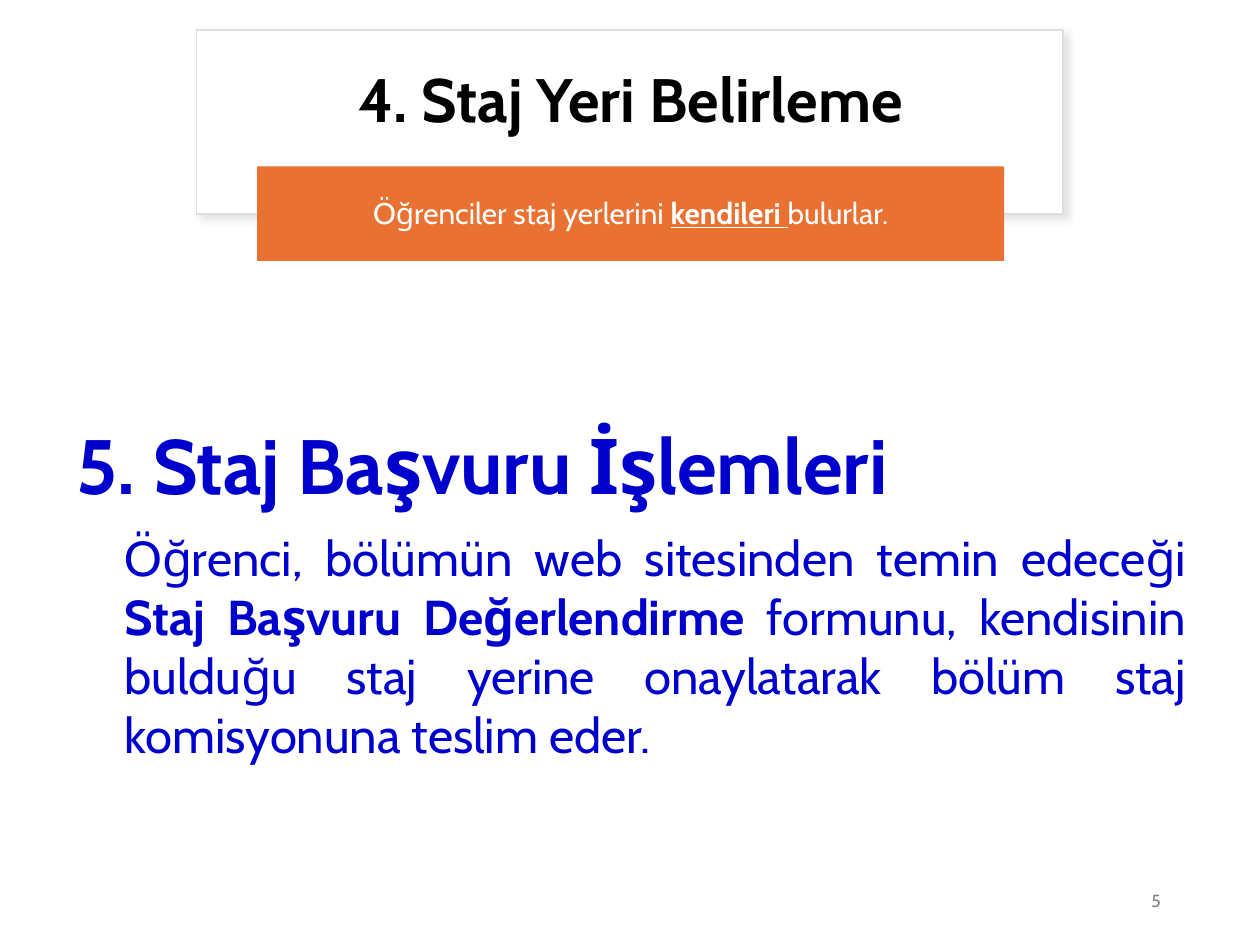
from dataclasses import dataclass

from lxml import etree
from pptx import Presentation
from pptx.dml.color import RGBColor
from pptx.enum.shapes import MSO_SHAPE
from pptx.enum.text import MSO_ANCHOR, PP_ALIGN
from pptx.oxml.ns import qn
from pptx.shapes.autoshape import Shape
from pptx.slide import Slide
from pptx.util import Inches, Pt

RECT, ROUND = MSO_SHAPE.RECTANGLE, MSO_SHAPE.ROUNDED_RECTANGLE
TOP, MID = MSO_ANCHOR.TOP, MSO_ANCHOR.MIDDLE
LEFT, RIGHT = PP_ALIGN.LEFT, PP_ALIGN.RIGHT
CENTER, FULL = PP_ALIGN.CENTER, PP_ALIGN.JUSTIFY

WHITE = RGBColor(255, 255, 255)
BLACK = RGBColor(0, 0, 0)
BLUE = RGBColor(0, 0, 204)
ORANGE = RGBColor(233, 113, 50)
GREY = RGBColor(128, 128, 128)
EDGE = RGBColor(222, 222, 222)
SHADE = RGBColor(197, 197, 197)

FONT = "Cabin"
WIDE, HIGH = Inches(10), Inches(7.5)
COLS, ROWS = 100, 75


@dataclass
class Box:
    col: float
    row: float
    cols: float
    rows: float

    def place(self) -> tuple[int, int, int, int]:
        return (
            round(self.col * WIDE / COLS),
            round(self.row * HIGH / ROWS),
            round(self.cols * WIDE / COLS),
            round(self.rows * HIGH / ROWS),
        )


@dataclass
class Words:
    text: str
    bold: bool = False
    under: bool = False


@dataclass
class Block:
    box: Box
    words: list[Words]
    size: int
    color: RGBColor
    align: PP_ALIGN = LEFT
    anchor: MSO_ANCHOR = MID
    space: float = 1.0
    margin: float = 0


PANEL = Box(15.6, 2.4, 68.8, 14.6)
BAND = Box(20.4, 13.2, 59.3, 7.5)

BLOCKS = [
    Block(Box(17.3, 3.4, 65.5, 9.5), [Words("4. Staj Yeri Belirleme", True)],
          35, BLACK, CENTER, space=0.9),
    Block(Box(21.5, 13.8, 57.1, 6.5),
          [Words("Öğrenciler staj yerlerini "),
           Words("kendileri ", True, True),
           Words("bulurlar.")],
          17, WHITE, CENTER, space=0.9),
    Block(Box(70.6, 69.5, 22.5, 4), [Words("5")], 10, GREY, RIGHT),
    Block(Box(5.1, 32.4, 90, 8.8), [Words("5. Staj Başvuru İşlemleri", True)],
          44, BLUE),
    Block(Box(5.1, 41.4, 90, 27.7),
          [Words("Öğrenci, bölümün web sitesinden temin edeceği "),
           Words("Staj Başvuru Değerlendirme", True),
           Words(" formunu, kendisinin bulduğu staj yerine onaylatarak "
                 "bölüm staj komisyonuna teslim eder.")],
          28, BLUE, FULL, TOP, margin=3.8),
]


def add_panel(slide: Slide, kind: MSO_SHAPE, box: Box, fill: RGBColor) -> Shape:
    panel = slide.shapes.add_shape(kind, *box.place())
    panel.shadow.inherit = False
    panel.fill.solid()
    panel.fill.fore_color.rgb = fill
    panel.line.fill.background()
    return panel


def add_shade(panel: Shape) -> None:
    effects = panel._element.spPr.find(qn("a:effectLst"))
    shade = etree.SubElement(
        effects, qn("a:outerShdw"), blurRad=str(Pt(4)), dist=str(Pt(3)),
        dir=str(45 * 60000), algn="tl", rotWithShape="0")
    color = etree.SubElement(shade, qn("a:srgbClr"), val=str(SHADE))
    etree.SubElement(color, qn("a:alpha"), val="50000")


def add_block(slide: Slide, block: Block) -> None:
    frame = slide.shapes.add_textbox(*block.box.place()).text_frame
    frame.word_wrap = True
    frame.vertical_anchor = block.anchor
    para = frame.paragraphs[0]
    para.alignment = block.align
    para.line_spacing = block.space
    if block.margin:
        props = para._p.get_or_add_pPr()
        props.set("marL", str(round(block.margin * WIDE / COLS)))
        props.set("indent", "0")
    for words in block.words:
        run = para.add_run()
        run.text = words.text
        font = run.font
        font.name = FONT
        font.size = Pt(block.size)
        font.color.rgb = block.color
        font.bold = words.bold
        font.underline = words.under


def main() -> None:
    deck = Presentation()
    deck.slide_width, deck.slide_height = WIDE, HIGH
    slide = deck.slides.add_slide(deck.slide_layouts[6])
    slide.background.fill.solid()
    slide.background.fill.fore_color.rgb = WHITE

    panel = add_panel(slide, RECT, PANEL, WHITE)
    panel.line.color.rgb = EDGE
    panel.line.width = Pt(1)
    add_shade(panel)
    band = add_panel(slide, ROUND, BAND, ORANGE)
    band.adjustments[0] = 0

    for block in BLOCKS:
        add_block(slide, block)
    deck.save("out.pptx")


if __name__ == "__main__":
    main()
